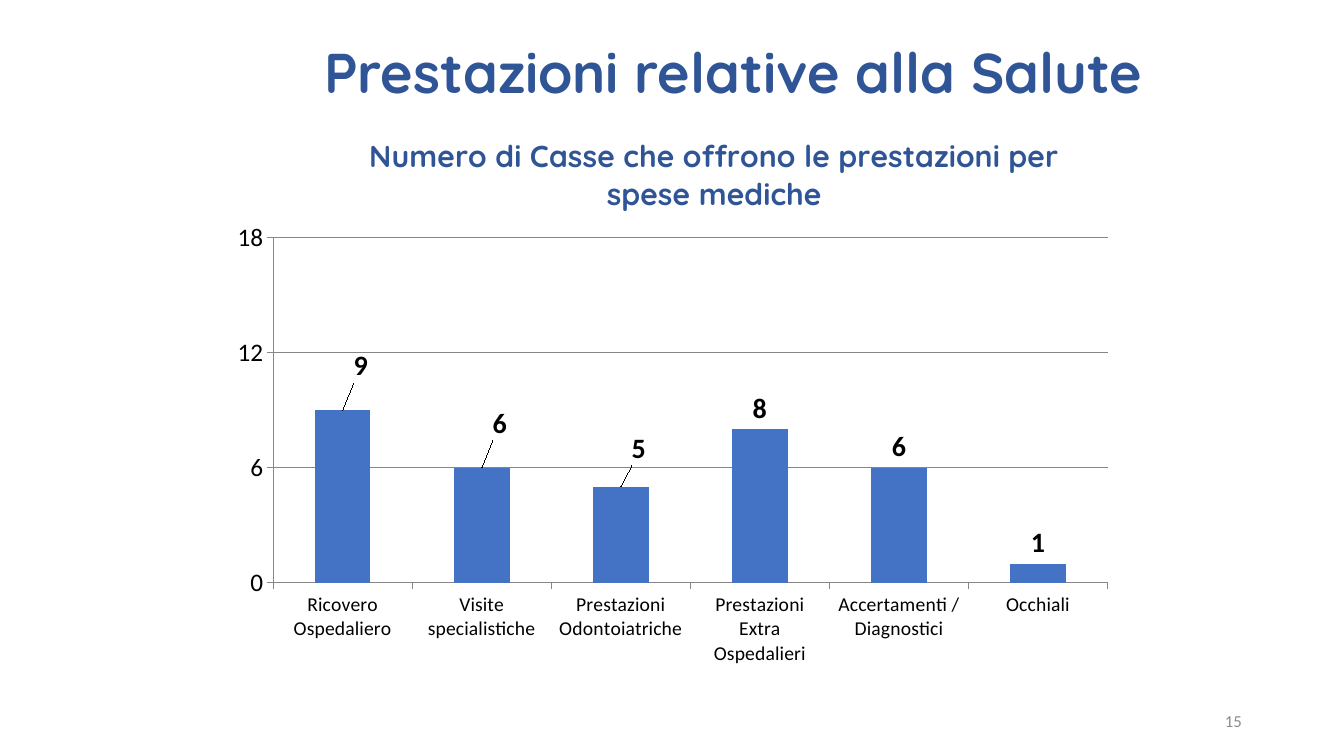
import pptx
import pptx.chart.data
import pptx.dml.color
import pptx.enum.chart
import pptx.enum.text
import pptx.oxml
import pptx.oxml.ns
import pptx.util

Cm = pptx.util.Cm
Pt = pptx.util.Pt
Mark = pptx.enum.chart.XL_TICK_MARK
Align = pptx.enum.text.PP_ALIGN
Anchor = pptx.enum.text.MSO_ANCHOR

BLUE = "2F5597"
GRID = "868686"
CASES = {
    "Ricovero Ospedaliero": 9,
    "Visite specialistiche": 6,
    "Prestazioni Odontoiatriche": 5,
    "Prestazioni Extra Ospedalieri": 8,
    "Accertamenti / Diagnostici": 6,
    "Occhiali": 1,
}
SHIFTS = [(0.02, -0.04), (0.02, -0.04), (0.02, -0.03)]


def tint(code):
    return pptx.dml.color.RGBColor.from_string(code)


def style(item, **format):
    for name, value in format.items():
        setattr(item, name, value)


def write(font, size, color, name="Calibri", bold=False):
    style(font, size=Pt(size), name=name, bold=bold)
    font.color.rgb = tint(color)


def rule(line):
    line.color.rgb = tint(GRID)
    line.width = Pt(0.75)


def place(node, index, **values):
    for old in node.findall(pptx.oxml.ns.qn("c:layout")):
        node.remove(old)
    parts = "".join(f'<c:{key} val="{val}"/>' for key, val in values.items())
    node.insert(index, pptx.oxml.parse_xml(
        f'<c:layout {pptx.oxml.ns.nsdecls("c")}>'
        f'<c:manualLayout>{parts}</c:manualLayout></c:layout>'))


def add_text(slide, box, text, anchor, align, **format):
    frame = slide.shapes.add_textbox(*map(Cm, box)).text_frame
    style(frame, word_wrap=True, vertical_anchor=anchor)
    para = frame.paragraphs[0]
    style(para, text=text, alignment=align)
    write(para.runs[0].font, **format)
    return para


def add_head(slide, box):
    para = add_text(slide, box, "Prestazioni relative alla Salute",
                    Anchor.TOP, Align.LEFT,
                    size=40, color=BLUE, name="Quicksand", bold=True)
    para.line_spacing = 0.9


def add_page(slide, box):
    add_text(slide, box, "15", Anchor.MIDDLE, Align.RIGHT,
             size=12, color="8C8C8C")


def add_bars(slide, box):
    data = pptx.chart.data.CategoryChartData()
    data.categories = list(CASES)
    data.add_series("Series 1", list(CASES.values()))
    kind = pptx.enum.chart.XL_CHART_TYPE.COLUMN_CLUSTERED
    chart = slide.shapes.add_chart(kind, *map(Cm, box), data).chart
    chart.has_legend = False
    write(chart.font, 18, "000000")

    title = chart.chart_title
    para = title.text_frame.paragraphs[0]
    para.text = "Numero di Casse che offrono le prestazioni per spese mediche"
    write(para.runs[0].font, 21.6, BLUE, "Quicksand", True)
    place(title._element, 1, xMode="edge", yMode="edge", x=0.16, y=0.05)
    area = chart._chartSpace.chart.plotArea
    place(area, 0, layoutTarget="inner", xMode="edge", yMode="edge",
          x=0.06, y=0.24, w=0.92, h=0.6)

    style(chart.value_axis, minimum_scale=0, maximum_scale=18, major_unit=6,
          has_major_gridlines=True)
    rule(chart.value_axis.major_gridlines.format.line)
    for axis, size in ((chart.category_axis, 14), (chart.value_axis, 18)):
        style(axis, major_tick_mark=Mark.OUTSIDE, minor_tick_mark=Mark.NONE)
        write(axis.tick_labels.font, size, "000000")
        rule(axis.format.line)

    plot = chart.plots[0]
    style(plot, gap_width=150, vary_by_categories=False)
    bars = plot.series[0]
    bars.format.fill.solid()
    bars.format.fill.fore_color.rgb = tint("4472C4")
    labels = bars.data_labels
    outer = pptx.enum.chart.XL_LABEL_POSITION.OUTSIDE_END
    style(labels, show_value=True, position=outer)
    write(labels.font, 20, "000000", bold=True)
    for index, (x, y) in enumerate(SHIFTS):
        label = bars.points[index].data_label
        write(label.font, 20, "000000", bold=True)
        label.position = outer
        place(labels._element.dLbl_lst[index], 1, x=x, y=y)


def main():
    deck = pptx.Presentation()
    style(deck, slide_width=Cm(33.87), slide_height=Cm(19.05))
    slide = deck.slides.add_slide(deck.slide_layouts[6])
    add_head(slide, (7.92, 1.02, 29.21, 3.68))
    add_bars(slide, (5.51, 2.51, 22.86, 14.5))
    add_page(slide, (23.93, 17.65, 7.62, 1.02))
    deck.save("out.pptx")


if __name__ == "__main__":
    main()
